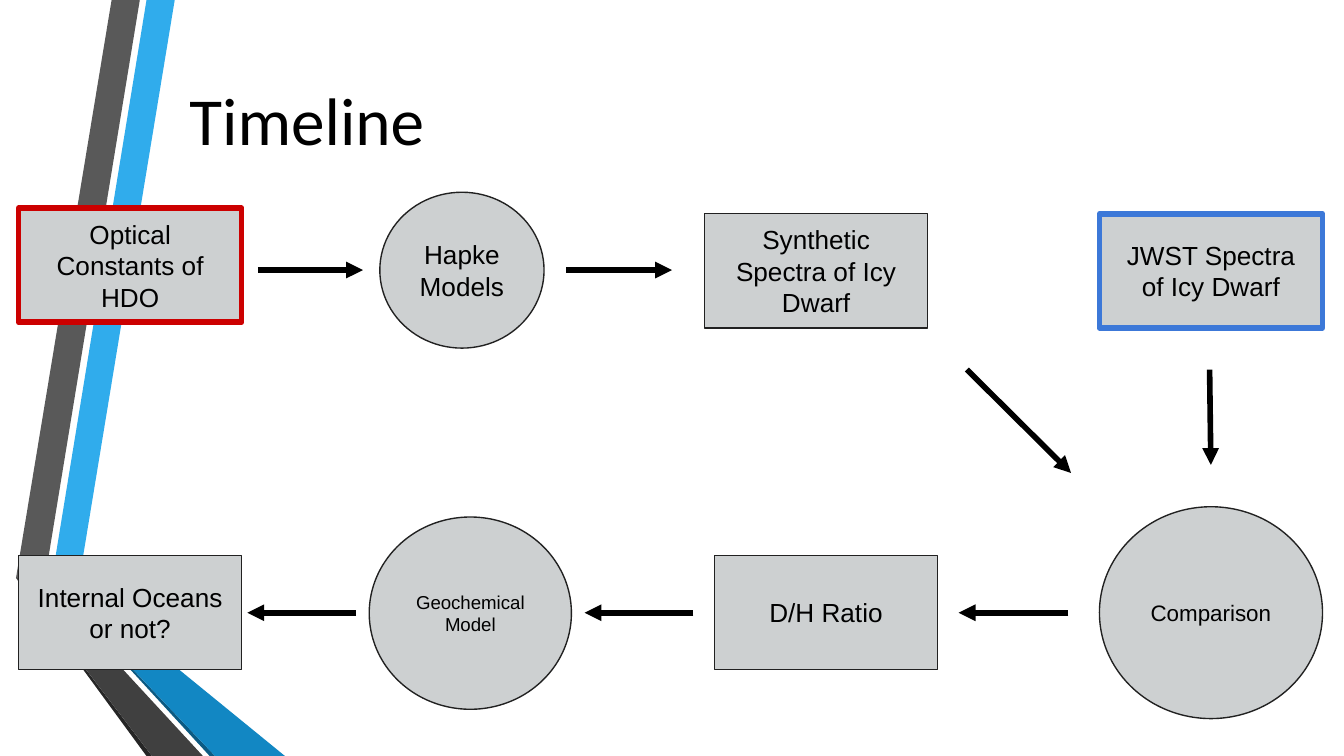
from dataclasses import dataclass
from typing import NamedTuple

from lxml import etree
from pptx import Presentation
from pptx.dml.color import RGBColor
from pptx.enum.shapes import MSO_CONNECTOR, MSO_SHAPE
from pptx.enum.text import MSO_ANCHOR, MSO_AUTO_SIZE, PP_ALIGN
from pptx.oxml.ns import qn
from pptx.util import Pt

RECT, OVAL = MSO_SHAPE.RECTANGLE, MSO_SHAPE.OVAL
STRAIGHT = MSO_CONNECTOR.STRAIGHT
TOP, MIDDLE = MSO_ANCHOR.TOP, MSO_ANCHOR.MIDDLE
LEFT, CENTER = PP_ALIGN.LEFT, PP_ALIGN.CENTER
NO_FIT = MSO_AUTO_SIZE.NONE


@dataclass(frozen=True)
class Theme:
    head: str = "Calibri"
    body: str = "Arial"
    ink: str = "000000"
    fill: str = "CDD0D1"
    edge: str = "212121"
    red: str = "CC0000"
    blue: str = "3C78D8"
    title: float = 36
    large: float = 14
    medium: float = 12
    small: float = 10
    thin: float = 0.75
    thick: float = 3
    inset: float = 7.2


THEME = Theme()


class Node(NamedTuple):
    lines: tuple[str, ...]
    left: float
    top: float
    width: float = 119.5
    height: float = 61.2
    kind: int = RECT
    size: float = THEME.large
    edge: str = THEME.edge
    weight: float = THEME.thin


class Arrow(NamedTuple):
    x1: float
    y1: float
    x2: float
    y2: float


class Band(NamedTuple):
    color: str
    points: tuple[tuple[float, float], ...]


BANDS = (
    Band("30ACEC", ((27.4, 312.5), (41.8, 314.6), (93.6, 0), (78.5, 0))),
    Band("595959", ((74.9, 0), (59.8, 0), (8.6, 309.6), (23.8, 311.8))),
    Band("262626", ((8.6, 309.6), (78.5, 405), (81.4, 405))),
    Band("0C5A82", ((27.4, 312.5), (112.3, 405), (115.2, 405))),
    Band("1287C3", ((27.4, 312.5), (115.2, 405), (152.6, 405), (41.8, 314.6))),
    Band("404040", ((108.7, 405), (25.9, 315.4), (23, 311.8), (8.6, 309.6),
                    (81.4, 405))),
)

COL1, COL4 = 10, 589
ROW1, ROW2 = 114.5, 297.5
NODES = (
    Node(("Optical Constants of HDO",), COL1, 111.5,
         edge=THEME.red, weight=THEME.thick),
    Node(("Hapke", "Models"), 203.5, 103, 88, 83.5, OVAL),
    Node(("Synthetic Spectra of Icy Dwarf",), 377.5, ROW1),
    Node(("JWST Spectra of Icy Dwarf",), COL4, ROW1,
         edge=THEME.blue, weight=THEME.thick),
    Node(("Comparison",), COL4, 271.5, 119.5, 113.5, OVAL, THEME.medium),
    Node(("D/H Ratio",), 382.8, ROW2),
    Node(("Geochemical Model",), 197.8, 277, 108.3, 103, OVAL, THEME.small),
    Node(("Internal Oceans or not?",), COL1, ROW2),
)

FLOW1, FLOW2 = 144.7, 328.3
ARROWS = (
    Arrow(138.2, FLOW1, 194.4, FLOW1),
    Arrow(303.3, FLOW1, 360, FLOW1),
    Arrow(518, 198, 573.8, 253.4),
    Arrow(648, 198, 648.7, 249.1),
    Arrow(572.4, FLOW2, 513.6, FLOW2),
    Arrow(371.5, FLOW2, 313.2, FLOW2),
    Arrow(190.8, FLOW2, 132.5, FLOW2),
)


def rgb(color: str) -> RGBColor:
    return RGBColor.from_string(color)


def add_run(para, text: str, font: str, size: float) -> None:
    run = para.add_run()
    run.text = text
    run.font.name = font
    run.font.size = Pt(size)
    run.font.color.rgb = rgb(THEME.ink)


def set_frame(frame, anchor) -> None:
    frame.word_wrap = True
    frame.auto_size = NO_FIT
    frame.vertical_anchor = anchor
    frame.margin_left = frame.margin_right = Pt(THEME.inset)
    frame.margin_top = frame.margin_bottom = Pt(THEME.inset)


def draw_band(slide, band: Band) -> None:
    start, *rest = [(Pt(x), Pt(y)) for x, y in band.points]
    path = slide.shapes.build_freeform(*start)
    path.add_line_segments(rest, close=True)
    shape = path.convert_to_shape()
    shape.shadow.inherit = False
    shape.fill.solid()
    shape.fill.fore_color.rgb = rgb(band.color)
    shape.line.fill.background()


def draw_title(slide, text: str) -> None:
    title = slide.shapes.title
    title.left, title.top = Pt(94.3), Pt(34.7)
    title.width, title.height = Pt(671), Pt(45.5)
    set_frame(title.text_frame, TOP)
    para = title.text_frame.paragraphs[0]
    para.alignment = LEFT
    add_run(para, text, THEME.head, THEME.title)


def draw_node(slide, node: Node) -> None:
    shape = slide.shapes.add_shape(
        node.kind, Pt(node.left), Pt(node.top), Pt(node.width), Pt(node.height))
    shape.shadow.inherit = False
    shape.fill.solid()
    shape.fill.fore_color.rgb = rgb(THEME.fill)
    shape.line.color.rgb = rgb(node.edge)
    shape.line.width = Pt(node.weight)
    frame = shape.text_frame
    set_frame(frame, MIDDLE)
    for i, line in enumerate(node.lines):
        para = frame.add_paragraph() if i else frame.paragraphs[0]
        para.alignment = CENTER
        add_run(para, line, THEME.body, node.size)


def draw_arrow(slide, arrow: Arrow) -> None:
    link = slide.shapes.add_connector(STRAIGHT, *(Pt(v) for v in arrow))
    link.line.color.rgb = rgb(THEME.ink)
    link.line.width = Pt(THEME.thick)
    props = link.line._get_or_add_ln()
    etree.SubElement(props, qn("a:tailEnd"), type="triangle")
    etree.SubElement(props.getparent(), qn("a:effectLst"))


def main() -> None:
    deck = Presentation()
    deck.slide_width, deck.slide_height = Pt(720), Pt(405)
    slide = deck.slides.add_slide(deck.slide_layouts[5])
    for band in BANDS:
        draw_band(slide, band)
    draw_title(slide, "Timeline")
    for node in NODES:
        draw_node(slide, node)
    for arrow in ARROWS:
        draw_arrow(slide, arrow)
    deck.save("out.pptx")


if __name__ == "__main__":
    main()
